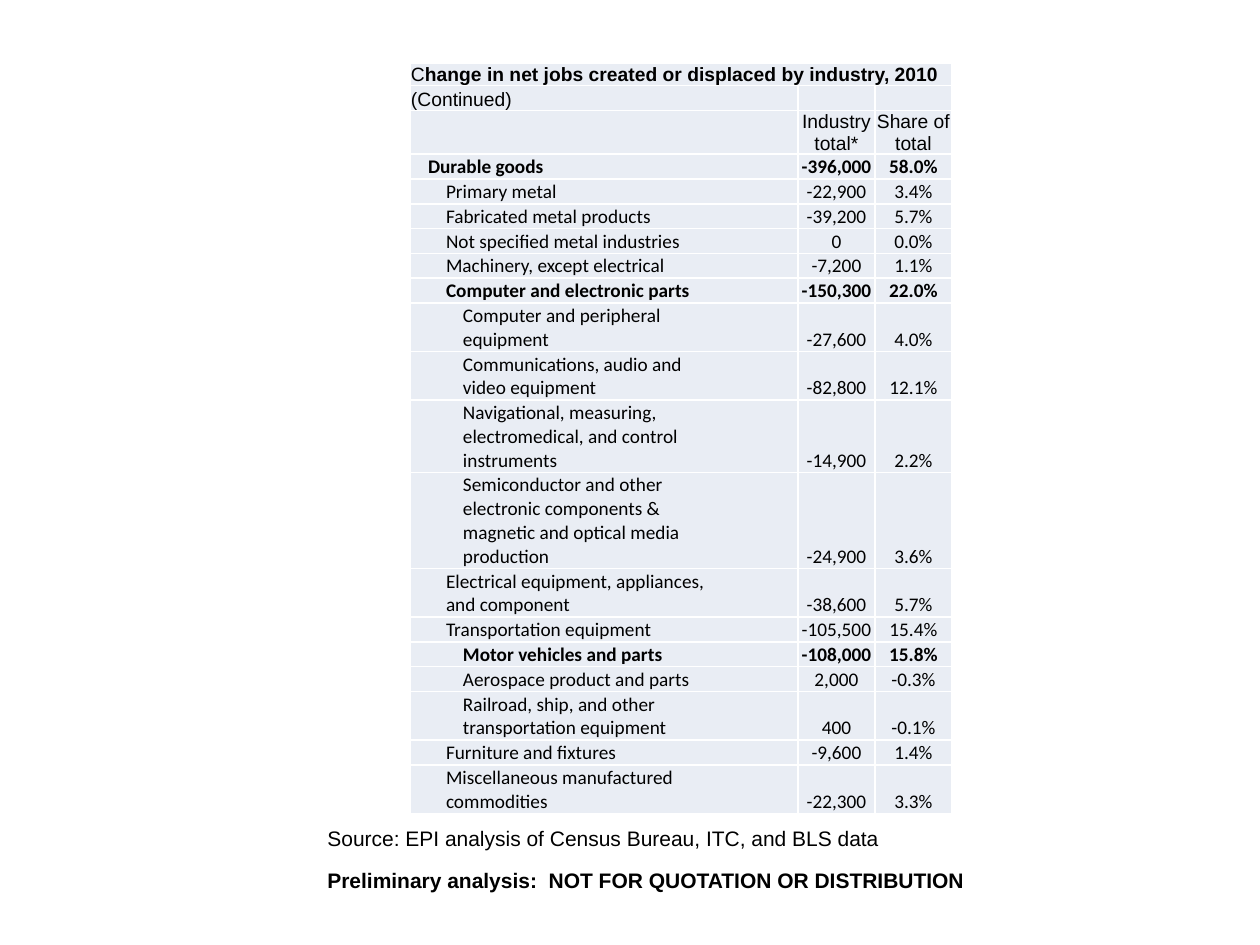
from dataclasses import dataclass

from lxml.etree import SubElement
from pptx import Presentation
from pptx.dml.color import RGBColor
from pptx.enum.text import MSO_ANCHOR, PP_ALIGN
from pptx.oxml.ns import qn
from pptx.util import Emu, Pt

PX_PER_INCH = 126


def px(n: int) -> Emu:
    return Emu(round(n * 914400 / PX_PER_INCH))


@dataclass(frozen=True)
class Theme:
    text: str = "000000"
    cell: str = "E9EDF4"
    border: str = "FFFFFF"
    border_pt: int = 1
    heading_font: str = "Arial"
    body_font: str = "Calibri"
    table_size: int = 11
    note_size: int = 12


@dataclass(frozen=True)
class Industry:
    name: str
    total: str
    share: str
    level: int
    bold: bool = False


@dataclass(frozen=True)
class Note:
    text: str
    top: int
    width: int
    bold: bool = False


THEME = Theme()
TABLE_LEFT, TABLE_TOP, TABLE_HEIGHT = 410, 63, 736
COLUMN_WIDTHS = (388, 77, 77)
HEADER_HEIGHTS = (20, 19, 35)
LINE_HEIGHT = 19
INDENTS = (0, 17, 35, 52)
NOTE_LEFT, NOTE_HEIGHT = 315, 38

INDUSTRIES = (
    Industry("Durable goods", "-396,000", "58.0%", 1, True),
    Industry("Primary metal", "-22,900", "3.4%", 2),
    Industry("Fabricated metal products", "-39,200", "5.7%", 2),
    Industry("Not specified metal industries", "0", "0.0%", 2),
    Industry("Machinery, except electrical", "-7,200", "1.1%", 2),
    Industry("Computer and electronic parts", "-150,300", "22.0%", 2, True),
    Industry("Computer and peripheral\nequipment", "-27,600", "4.0%", 3),
    Industry("Communications, audio and\nvideo equipment", "-82,800", "12.1%", 3),
    Industry("Navigational, measuring,\nelectromedical, and control\ninstruments",
             "-14,900", "2.2%", 3),
    Industry("Semiconductor and other\nelectronic components &\n"
             "magnetic and optical media\nproduction", "-24,900", "3.6%", 3),
    Industry("Electrical equipment, appliances,\nand component", "-38,600", "5.7%", 2),
    Industry("Transportation equipment", "-105,500", "15.4%", 2),
    Industry("Motor vehicles and parts", "-108,000", "15.8%", 3, True),
    Industry("Aerospace product and parts", "2,000", "-0.3%", 3),
    Industry("Railroad, ship, and other\ntransportation equipment", "400", "-0.1%", 3),
    Industry("Furniture and fixtures", "-9,600", "1.4%", 2),
    Industry("Miscellaneous manufactured\ncommodities", "-22,300", "3.3%", 2),
)

NOTES = (
    Note("Preliminary analysis:  NOT FOR QUOTATION OR DISTRIBUTION", 861, 693, True),
    Note("Source: EPI analysis of Census Bureau, ITC, and BLS data", 819, 672),
)


def format_run(r, font: str, size: int, bold: bool = False) -> None:
    r.font.name = font
    r.font.size = Pt(size)
    r.font.bold = bold
    r.font.color.rgb = RGBColor.from_string(THEME.text)


def style_cell(cell) -> None:
    """Give a cell its margins, anchor, borders, fill and empty-line text size."""
    cell.margin_left = cell.margin_right = cell.margin_top = px(1)
    cell.margin_bottom = 0
    cell.vertical_anchor = MSO_ANCHOR.BOTTOM
    tc_pr = cell._tc.get_or_add_tcPr()
    for side in ("a:lnL", "a:lnR", "a:lnT", "a:lnB"):
        line = SubElement(tc_pr, qn(side), w=str(Pt(THEME.border_pt)))
        fill = SubElement(line, qn("a:solidFill"))
        SubElement(fill, qn("a:srgbClr"), val=THEME.border)
    cell.fill.solid()
    cell.fill.fore_color.rgb = RGBColor.from_string(THEME.cell)
    end = SubElement(cell.text_frame.paragraphs[0]._p, qn("a:endParaRPr"),
                     sz=str(THEME.table_size * 100))
    SubElement(end, qn("a:latin"), typeface=THEME.body_font)


def write_cell(cell, text: str, font: str, bold: bool = False,
               level: int = 0, centred: bool = False) -> None:
    p = cell.text_frame.paragraphs[0]
    p.text = text
    p.alignment = PP_ALIGN.CENTER if centred else PP_ALIGN.LEFT
    if level:
        p._p.get_or_add_pPr().set("marL", str(px(INDENTS[level])))
    for r in p.runs:
        format_run(r, font, THEME.table_size, bold)


def add_jobs_table(s) -> None:
    heights = HEADER_HEIGHTS + tuple(
        LINE_HEIGHT * (i.name.count("\n") + 1) for i in INDUSTRIES)
    frame = s.shapes.add_table(len(heights), len(COLUMN_WIDTHS), px(TABLE_LEFT),
                               px(TABLE_TOP), px(sum(COLUMN_WIDTHS)), px(TABLE_HEIGHT))
    table = frame.table
    table.first_row = table.horz_banding = False
    for column, width in zip(table.columns, COLUMN_WIDTHS):
        column.width = px(width)
    for row, height in zip(table.rows, heights):
        row.height = px(height)
        for cell in row.cells:
            style_cell(cell)
    frame.height = px(TABLE_HEIGHT)

    title = table.cell(0, 0)
    title.merge(table.cell(0, len(COLUMN_WIDTHS) - 1))
    write_cell(title, "C", THEME.heading_font)
    r = title.text_frame.paragraphs[0].add_run()
    r.text = "hange in net jobs created or displaced by industry, 2010"
    format_run(r, THEME.heading_font, THEME.table_size, True)
    write_cell(table.cell(1, 0), "(Continued)", THEME.heading_font)
    for col, text in enumerate(("Industry total*", "Share of total"), start=1):
        write_cell(table.cell(2, col), text, THEME.heading_font, centred=True)

    for row, i in enumerate(INDUSTRIES, start=len(HEADER_HEIGHTS)):
        write_cell(table.cell(row, 0), i.name, THEME.body_font, i.bold, i.level)
        for col, value in enumerate((i.total, i.share), start=1):
            write_cell(table.cell(row, col), value, THEME.body_font, i.bold, centred=True)


def add_note(s, note: Note) -> None:
    sp = s.shapes.add_textbox(px(NOTE_LEFT), px(note.top), px(note.width), px(NOTE_HEIGHT))
    tf = sp.text_frame
    tf.word_wrap = True
    tf.text = note.text
    format_run(tf.paragraphs[0].runs[0], THEME.heading_font, THEME.note_size, note.bold)


def main() -> None:
    prs = Presentation()
    prs.slide_width, prs.slide_height = px(1260), px(945)
    s = prs.slides.add_slide(prs.slide_layouts[6])
    add_jobs_table(s)
    for note in NOTES:
        add_note(s, note)
    prs.save("out.pptx")


if __name__ == "__main__":
    main()
